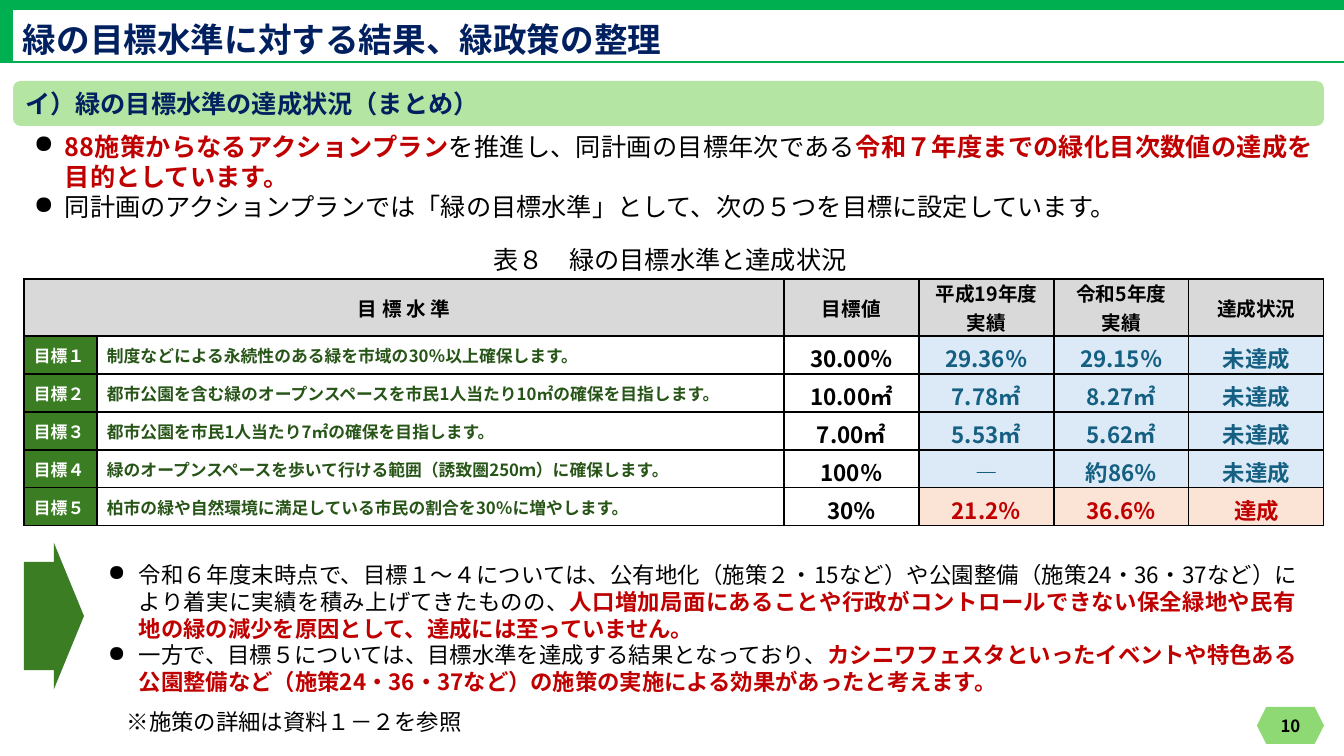
from lxml.etree import SubElement
from pptx import Presentation
from pptx.dml.color import RGBColor
from pptx.enum.lang import MSO_LANGUAGE_ID as Language
from pptx.enum.shapes import MSO_CONNECTOR as Connector, MSO_SHAPE as Shape
from pptx.enum.text import MSO_ANCHOR as Anchor, MSO_AUTO_SIZE as AutoSize, PP_ALIGN as Align
from pptx.oxml.ns import qn
from pptx.util import Emu, Pt

# Content: runs are (text, style) pairs
TITLE = "緑の目標水準に対する結果、緑政策の整理"
SECTION = "イ）緑の目標水準の達成状況（まとめ）"
INTRO = [
    [("88施策からなるアクションプラン", "lead_key"),
     ("を推進し、同計画の目標年次である", "lead"),
     ("令和７年度までの緑化目次数値の達成を目的としています。", "lead_key")],
    [("同計画のアクションプランでは「緑の目標水準」として、次の５つを目標に設定しています。", "lead")],
]
CAPTION = "表８　緑の目標水準と達成状況"
HEADER = ["目 標 水 準", "", "目標値", "平成19年度\n実績", "令和5年度\n実績", "達成状況"]
GOALS = [
    ("目標１", "制度などによる永続性のある緑を市域の30％以上確保します。",
     "30.00％", "29.36％", "29.15％", "未達成"),
    ("目標２", "都市公園を含む緑のオープンスペースを市民1人当たり10㎡の確保を目指します。",
     "10.00㎡", "7.78㎡", "8.27㎡", "未達成"),
    ("目標３", "都市公園を市民1人当たり7㎡の確保を目指します。",
     "7.00㎡", "5.53㎡", "5.62㎡", "未達成"),
    ("目標４", "緑のオープンスペースを歩いて行ける範囲（誘致圏250ｍ）に確保します。",
     "100％", "―", "約86％", "未達成"),
    ("目標５", "柏市の緑や自然環境に満足している市民の割合を30％に増やします。",
     "30％", "21.2％", "36.6％", "達成"),
]
FINDINGS = [
    [("令和６年度末時点で、目標１～４については、公有地化（施策２・15など）や公園整備"
      "（施策24・36・37など）により着実に実績を積み上げてきたものの、", "body"),
     ("人口増加局面にあることや行政がコントロールできない保全緑地や民有地の緑の減少を"
      "原因として、達成には至っていません。", "body_key")],
    [("一方で、目標５については、目標水準を達成する結果となっており、", "body"),
     ("カシニワフェスタといったイベントや特色ある公園整備など（施策24・36・37など）の"
      "施策の実施による効果があったと考えます。", "body_key")],
]
NOTE = "※施策の詳細は資料１－２を参照"
PAGE = "10"


class Theme:
    font = "Noto Sans CJK JP"
    bar, band, badge, dark = "00B050", "B4E5A2", "8ED973", "3B7D23"
    head, plain, missed, met, black = "D9D9D9", "FFFFFF", "DCEAF7", "FBE3D6", "000000"
    # style: size, colour, bold
    styles = {
        "title": (24, "002060", True),
        "section": (18, "002060", True),
        "lead": (18, "000000", False),
        "lead_key": (18, "C00000", True),
        "body": (16, "000000", False),
        "body_key": (16, "C00000", True),
        "page": (12, "000000", True),
        "head": (14, "000000", True),
        "goal": (12, "FFFFFF", True),
        "aim": (12, "275417", True),
        "target": (16, "000000", True),
        "missed": (16, "156082", True),
        "met": (16, "C00000", True),
    }


# Layout in px
SCALE = 12192000 / 1344
WIDTH, HEIGHT = 1344, 756
INDENT = 31
TABLE_LEFT, TABLE_TOP = 24, 279
COLUMNS = [73, 687] + [135] * 4
ROWS = [57] + [38] * len(GOALS)
SIDE, INSET = 10, 5


def px(value):
    return Emu(round(value * SCALE))


def box(*values):
    return [px(value) for value in values]


def apply(target, formats):
    for name, value in formats.items():
        setattr(target, name, value)


def add_run(paragraph, text, style):
    size, colour, bold = Theme.styles[style]
    run = paragraph.add_run()
    run.text = text
    apply(run.font, {"name": Theme.font, "size": Pt(size), "bold": bold,
                     "language_id": Language.JAPANESE})
    run.font.color.rgb = RGBColor.from_string(colour)
    SubElement(run.font._element, qn("a:ea"), typeface=Theme.font)


def add_bullet(paragraph):
    properties = paragraph._p.get_or_add_pPr()
    properties.set("marL", str(px(INDENT)))
    properties.set("indent", str(-px(INDENT)))
    colour = SubElement(properties, qn("a:buClr"))
    SubElement(colour, qn("a:srgbClr"), val=Theme.black)
    SubElement(properties, qn("a:buChar"), char="●")


def write(frame, paragraphs, align=Align.LEFT, bullets=False):
    for index, runs in enumerate(paragraphs):
        paragraph = frame.add_paragraph() if index else frame.paragraphs[0]
        paragraph.alignment = align
        if bullets:
            add_bullet(paragraph)
        for text, style in runs:
            add_run(paragraph, text, style)


def add_text(slide, place, paragraphs, wrap=True, **options):
    frame = slide.shapes.add_textbox(*box(*place)).text_frame
    apply(frame, {"word_wrap": wrap, "auto_size": AutoSize.SHAPE_TO_FIT_TEXT})
    write(frame, paragraphs, **options)


def add_block(slide, kind, place, colour):
    shape = slide.shapes.add_shape(kind, *box(*place))
    shape.shadow.inherit = False
    shape.fill.solid()
    shape.fill.fore_color.rgb = RGBColor.from_string(colour)
    shape.line.fill.background()
    return shape


def fill_cell(cell, text, style, colour, align, inset):
    top, bottom = inset
    apply(cell, {"margin_left": px(SIDE), "margin_right": px(SIDE), "margin_top": px(top),
                 "margin_bottom": px(bottom), "vertical_anchor": Anchor.MIDDLE})
    for edge in ("lnL", "lnR", "lnT", "lnB"):
        line = SubElement(cell._tc.get_or_add_tcPr(), qn(f"a:{edge}"), w=str(Pt(1)))
        SubElement(SubElement(line, qn("a:solidFill")), qn("a:srgbClr"), val=Theme.black)
    cell.fill.solid()
    cell.fill.fore_color.rgb = RGBColor.from_string(colour)
    if text:
        write(cell.text_frame, [[(part, style)] for part in text.split("\n")], align)


def add_goal_table(slide):
    place = box(TABLE_LEFT, TABLE_TOP, sum(COLUMNS), sum(ROWS))
    table = slide.shapes.add_table(len(ROWS), len(COLUMNS), *place).table
    apply(table, {"first_row": False, "horz_banding": False})
    for column, width in zip(table.columns, COLUMNS):
        column.width = px(width)
    for row, height in zip(table.rows, ROWS):
        row.height = px(height)
    for index, text in enumerate(HEADER):
        fill_cell(table.cell(0, index), text, "head", Theme.head, Align.CENTER, (0, 0))
    table.cell(0, 0).merge(table.cell(0, 1))
    for row, goal in enumerate(GOALS, 1):
        result = "met" if goal[-1] == "達成" else "missed"
        styles = ["goal", "aim", "target"] + [result] * 3
        colours = [Theme.dark, Theme.plain, Theme.plain] + [getattr(Theme, result)] * 3
        for index, (text, style, colour) in enumerate(zip(goal, styles, colours)):
            label = index < 2
            fill_cell(table.cell(row, index), text, style, colour,
                      Align.LEFT if label else Align.CENTER, (INSET, INSET if label else 0))


def main():
    presentation = Presentation()
    apply(presentation, {"slide_width": px(WIDTH), "slide_height": px(HEIGHT)})
    slide = presentation.slides.add_slide(presentation.slide_layouts[6])

    # Title frame
    add_block(slide, Shape.RECTANGLE, (0, 0, WIDTH, 10), Theme.bar)
    rule = slide.shapes.add_connector(Connector.STRAIGHT, *box(0, 62, WIDTH, 62))
    rule.line.width = Pt(1.5)
    rule.line.color.rgb = RGBColor.from_string(Theme.bar)
    SubElement(rule._element.spPr, qn("a:effectLst"))
    add_text(slide, (13, 14, 665, 50), [[(TITLE, "title")]], wrap=False)
    add_block(slide, Shape.RECTANGLE, (0, 8, 13, 54), Theme.bar)

    # Page number
    badge = add_block(slide, Shape.HEXAGON, (1257, 707, 67, 37), Theme.badge)
    apply(badge.text_frame, {"margin_left": 0, "margin_right": 0, "margin_top": 0,
                             "margin_bottom": 0, "vertical_anchor": Anchor.MIDDLE})
    write(badge.text_frame, [[(PAGE, "page")]], Align.CENTER)

    # Section band and introduction
    band = add_block(slide, Shape.ROUNDED_RECTANGLE, (13, 81, 1311, 45), Theme.band)
    band.text_frame.vertical_anchor = Anchor.TOP
    write(band.text_frame, [[(SECTION, "section")]])
    add_text(slide, (24, 126, 1299, 102), INTRO, align=Align.JUSTIFY, bullets=True)

    # Goals
    add_goal_table(slide)
    add_text(slide, (84, 239, 1172, 40), [[(CAPTION, "lead")]], align=Align.CENTER)

    # Findings
    arrow = add_block(slide, Shape.RIGHT_ARROW, (24, 543, 60, 146), Theme.dark)
    arrow.adjustments[0] = 0.74
    add_text(slide, (98, 556, 1209, 146), FINDINGS, align=Align.JUSTIFY, bullets=True)
    add_text(slide, (117, 703, 367, 37), [[(NOTE, "body")]])

    presentation.save("out.pptx")


if __name__ == "__main__":
    main()
